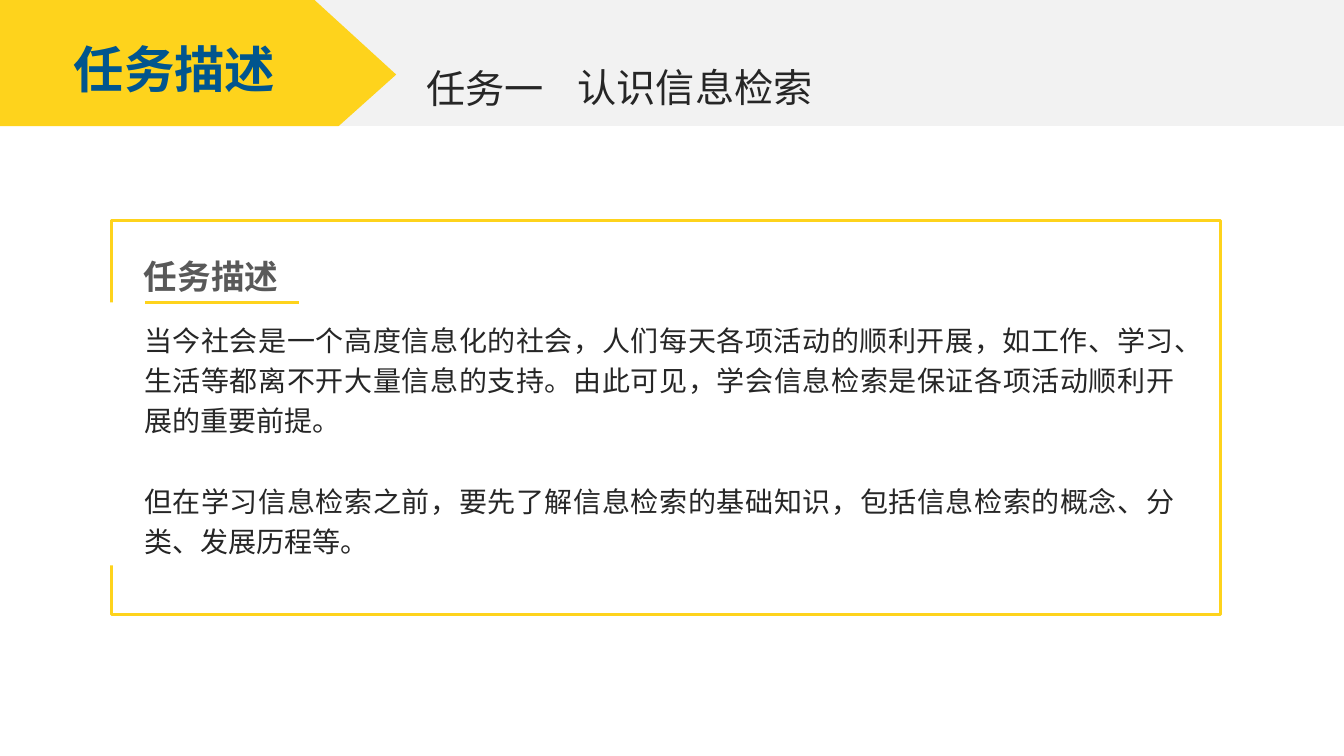
import pptx
import pptx.dml.color
import pptx.enum.shapes
import pptx.enum.text
import pptx.oxml.ns
import pptx.oxml.xmlchemy
import pptx.util

Inches = pptx.util.Inches
Pt = pptx.util.Pt
Shapes = pptx.enum.shapes.MSO_SHAPE
Align = pptx.enum.text.PP_ALIGN

COLORS = {
    "yellow": "FED31C",
    "white": "FFFFFF",
    "band": "F2F2F2",
    "blue": "01558E",
    "heading": "595959",
    "body": "262626",
}
CJK_FONT = "Noto Sans CJK SC"

BODY = [
    "当今社会是一个高度信息化的社会，人们每天各项活动的顺利开展，如工作、学习、生活等都离不开大量信息的支持。由此可见，学会信息检索是保证各项活动顺利开展的重要前提。",
    "但在学习信息检索之前，要先了解信息检索的基础知识，包括信息检索的概念、分类、发展历程等。",
]
FRAME = (1.11, 2.19, 11, 3.91)
FRAME_GAP = (0.95, 3, 0.38, 2.61)
UNDERLINE = (1.44, 3, 2.97, 3)
HEADER_BAND = (2.55, 0, 10.78, 1.25)
HEADER_ARROW = [(0, 0), (3.12, 0), (3.93, 0.74), (3.36, 1.25), (0, 1.25)]

BODY_STYLE = dict(size=20, color="body", align=Align.JUSTIFY, spacing=1.2)
HEADING_STYLE = dict(size=24, color="heading", bold=True, align=Align.JUSTIFY, spacing=1.2)
BADGE_STYLE = dict(size=36, color="blue", bold=True, align=Align.CENTER, font=CJK_FONT, wrap=False)
TOPIC_STYLE = dict(size=28, color="body")

TEXTS = [
    ((1.33, 3.09, 10.42, 2.52), BODY, BODY_STYLE),
    ((1.33, 2.41, 3.07, 0.54), ["任务描述"], HEADING_STYLE),
    ((0.62, 0.33, 2.22, 0.71), ["任务描述"], BADGE_STYLE),
    ((5.63, 0.58, 5.02, 0.57), ["认识信息检索"], TOPIC_STYLE),
    ((4.13, 0.59, 1.49, 0.57), ["任务一"], TOPIC_STYLE),
]


def rgb(name):
    return pptx.dml.color.RGBColor.from_string(COLORS[name])


def paint(shape, fill, line=None):
    shape.shadow.inherit = False
    shape.fill.solid()
    shape.fill.fore_color.rgb = rgb(fill)
    if line:
        shape.line.color.rgb = rgb(line)
        shape.line.width = Pt(2)
    else:
        shape.line.fill.background()


def add_rectangle(slide, box, fill, line=None):
    shape = slide.shapes.add_shape(Shapes.RECTANGLE, *map(Inches, box))
    paint(shape, fill, line)


def add_underline(slide, ends):
    kind = pptx.enum.shapes.MSO_CONNECTOR.STRAIGHT
    connector = slide.shapes.add_connector(kind, *map(Inches, ends))
    connector.line.color.rgb = rgb("yellow")
    connector.line.width = Pt(2)
    properties = connector._element.spPr
    properties.append(pptx.oxml.xmlchemy.OxmlElement("a:effectLst"))


def add_arrow(slide, points):
    corners = [(Inches(x), Inches(y)) for x, y in points]
    builder = slide.shapes.build_freeform(*corners[0])
    builder.add_line_segments(corners[1:], close=True)
    paint(builder.convert_to_shape(), "yellow")


def add_text(slide, box, lines, size, color, bold=False, align=Align.LEFT,
             spacing=1.0, font="Arial", wrap=True):
    frame = slide.shapes.add_textbox(*map(Inches, box)).text_frame
    frame.word_wrap = wrap
    frame.auto_size = pptx.enum.text.MSO_AUTO_SIZE.SHAPE_TO_FIT_TEXT
    for index, line in enumerate(lines):
        paragraph = frame.add_paragraph() if index else frame.paragraphs[0]
        paragraph.alignment = align
        paragraph.line_spacing = spacing
        if index:
            paragraph.space_before = Pt(size * 1.2 * spacing)
        run = paragraph.add_run()
        run.text = line
        run.font.size = Pt(size)
        run.font.bold = bold
        run.font.name = font
        run.font.color.rgb = rgb(color)
        east_asian = pptx.oxml.xmlchemy.OxmlElement("a:ea")
        east_asian.set("typeface", CJK_FONT)
        run._r.rPr.find(pptx.oxml.ns.qn("a:latin")).addnext(east_asian)


def main():
    presentation = pptx.Presentation()
    presentation.slide_width = Inches(13.33)
    presentation.slide_height = Inches(7.5)
    slide = presentation.slides.add_slide(presentation.slide_layouts[6])
    add_rectangle(slide, FRAME, "white", "yellow")
    add_rectangle(slide, FRAME_GAP, "white")
    add_underline(slide, UNDERLINE)
    add_rectangle(slide, HEADER_BAND, "band")
    add_arrow(slide, HEADER_ARROW)
    for box, lines, style in TEXTS:
        add_text(slide, box, lines, **style)
    presentation.save("out.pptx")


if __name__ == "__main__":
    main()
